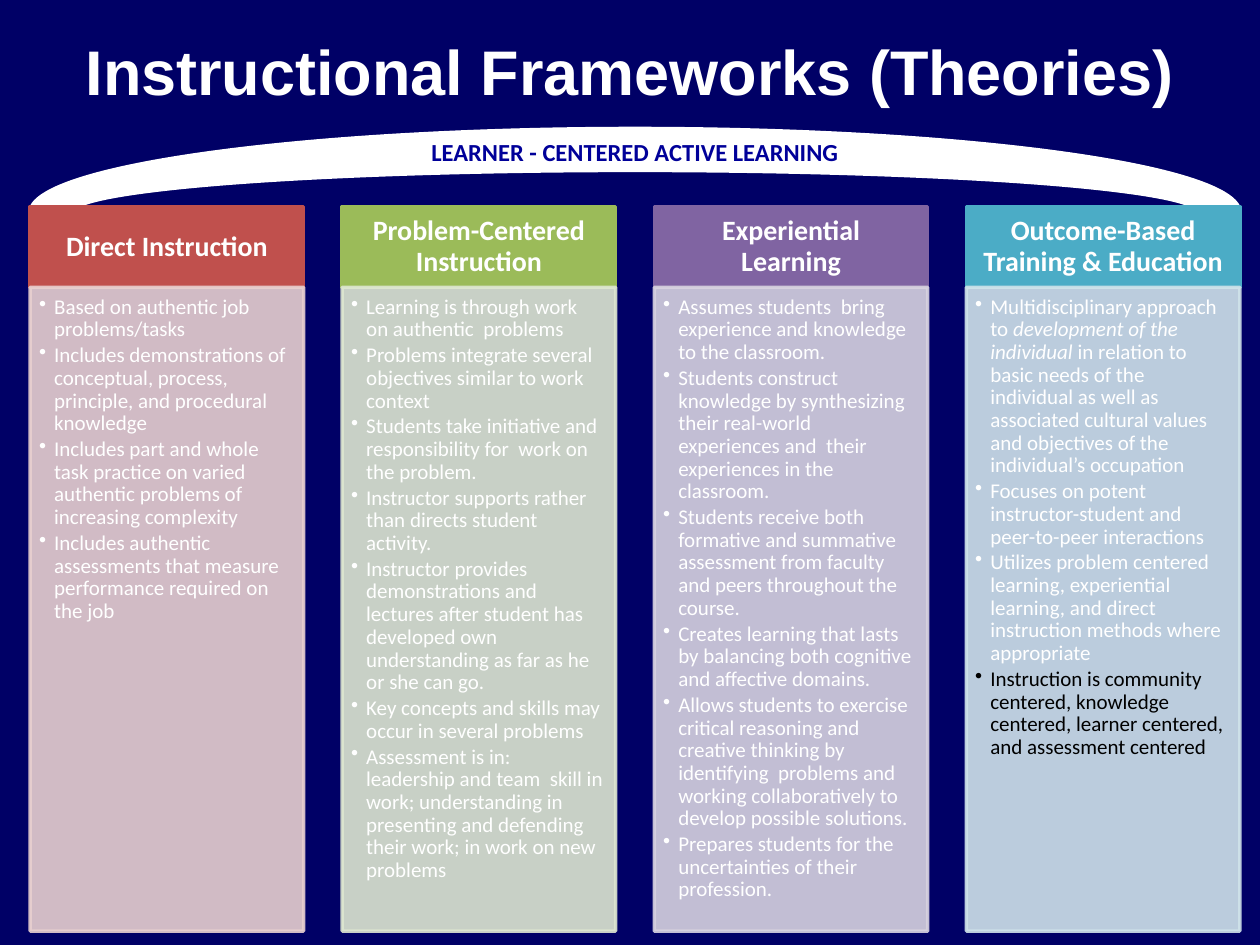
from dataclasses import dataclass

from lxml import etree
from pptx import Presentation
from pptx.dml.color import RGBColor
from pptx.enum.shapes import MSO_SHAPE
from pptx.enum.text import MSO_ANCHOR, PP_ALIGN
from pptx.oxml.ns import qn
from pptx.util import Inches, Pt

RECTANGLE, BLOCK_ARC = MSO_SHAPE.RECTANGLE, MSO_SHAPE.BLOCK_ARC
TOP, MIDDLE = MSO_ANCHOR.TOP, MSO_ANCHOR.MIDDLE
LEFT, CENTER = PP_ALIGN.LEFT, PP_ALIGN.CENTER


@dataclass(frozen=True)
class Theme:
    background: str = "000066"
    white: str = "FFFFFF"
    black: str = "000000"
    arc_text: str = "000099"
    title_font: str = "Arial"
    body_font: str = "Calibri"
    title_size: int = 36
    heading_size: int = 16
    arc_size: int = 14
    body_size: int = 12
    line_width: int = 2
    body_opacity: int = 90


class FrameworkSlide:
    def __init__(self, slide, theme):
        self.slide = slide
        self.theme = theme
        slide.background.fill.solid()
        slide.background.fill.fore_color.rgb = RGBColor.from_string(theme.background)

    def panel(self, preset, box, color, opacity=100):
        shape = self.slide.shapes.add_shape(preset, *map(Inches, box))
        shape.shadow.inherit = False
        shape.line.width = Pt(self.theme.line_width)
        shape.line.fill.solid()
        shape.fill.solid()
        for fill in (shape.fill, shape.line.fill):
            fill.fore_color.rgb = RGBColor.from_string(color)
        if opacity < 100:
            for tint in shape._element.spPr.iter(qn("a:srgbClr")):
                etree.SubElement(tint, qn("a:alpha"), val=str(opacity * 1000))
        return shape

    def frame(self, shape, insets, anchor=MIDDLE):
        frame = shape.text_frame
        frame.word_wrap = True
        frame.vertical_anchor = anchor
        (frame.margin_left, frame.margin_top,
         frame.margin_right, frame.margin_bottom) = map(Inches, insets)
        return frame

    def style(self, paragraph, size, color, font=None, bold=False, align=CENTER):
        paragraph.alignment = align
        paragraph.font.name = font or self.theme.body_font
        paragraph.font.size = Pt(size)
        paragraph.font.bold = bold
        paragraph.font.color.rgb = RGBColor.from_string(color)

    def title(self, text, box):
        shape = self.slide.shapes.add_textbox(*map(Inches, box))
        paragraph = self.frame(shape, (0.1, 0.05, 0.1, 0.05)).paragraphs[0]
        paragraph.text = text
        self.style(paragraph, self.theme.title_size, self.theme.white,
                   self.theme.title_font, bold=True)

    def arc(self, text, box):
        shape = self.panel(BLOCK_ARC, box, self.theme.white)
        for index, value in enumerate((108, 0, 0.25)):
            shape.adjustments[index] = value
        paragraph = self.frame(shape, (0.1, 0.05, 0.1, 0.35)).paragraphs[0]
        paragraph.text = text
        self.style(paragraph, self.theme.arc_size, self.theme.arc_text, bold=True)

    def heading(self, text, box, color):
        shape = self.panel(RECTANGLE, box, color)
        paragraph = self.frame(shape, (0.12, 0.07, 0.12, 0.07)).paragraphs[0]
        paragraph.text = text
        paragraph.line_spacing = 0.9
        self.style(paragraph, self.theme.heading_size, self.theme.white, bold=True)

    def bullets(self, points, box, color, dark_point=None):
        shape = self.panel(RECTANGLE, box, color, self.theme.body_opacity)
        frame = self.frame(shape, (0.07, 0.07, 0.09, 0.1), TOP)
        for index, point in enumerate(points):
            paragraph = frame.add_paragraph() if index else frame.paragraphs[0]
            for part, words in enumerate(point.split("*")):
                run = paragraph.add_run()
                run.text = words
                if part % 2:
                    run.font.italic = True
            paragraph.line_spacing = 0.9
            paragraph.space_after = Pt(1.8)
            properties = paragraph._p.get_or_add_pPr()
            properties.set("marL", str(Inches(0.12)))
            properties.set("indent", str(-Inches(0.12)))
            etree.SubElement(properties, qn("a:buChar"), char="•")
            text_color = self.theme.black if index == dark_point else self.theme.white
            self.style(paragraph, self.theme.body_size, text_color, align=LEFT)


FRAMEWORKS = [
    ("Direct Instruction", "C0504D", "E8D0D0", None, [
        "Based on authentic job problems/tasks",
        "Includes demonstrations of conceptual, process, principle, and procedural knowledge",
        "Includes part and whole task practice on varied authentic problems of "
        "increasing complexity",
        "Includes authentic assessments that measure performance required on the job",
    ]),
    ("Problem-Centered Instruction", "9BBB59", "DEE7D1", None, [
        "Learning is through work on authentic  problems",
        "Problems integrate several objectives similar to work context",
        "Students take initiative and responsibility for  work on the problem.",
        "Instructor supports rather than directs student  activity.",
        "Instructor provides demonstrations and lectures after student has developed own "
        "understanding as far as he or she can go.",
        "Key concepts and skills may occur in several problems",
        "Assessment is in: leadership and team  skill in work; understanding in presenting "
        "and defending  their work; in work on new problems",
    ]),
    ("Experiential Learning", "8064A2", "D8D3E0", None, [
        "Assumes students  bring experience and knowledge to the classroom.",
        "Students construct knowledge by synthesizing their real-world experiences and  "
        "their experiences in the classroom.",
        "Students receive both formative and summative assessment from faculty and peers "
        "throughout the course.",
        "Creates learning that lasts by balancing both cognitive and affective domains.",
        "Allows students to exercise critical reasoning and creative thinking by  "
        "identifying  problems and working collaboratively to develop possible solutions.",
        "Prepares students for the uncertainties of their profession.",
    ]),
    ("Outcome-Based Training & Education", "4BACC6", "D0E3EA", 3, [
        "Multidisciplinary approach to *development of the individual* in relation to basic "
        "needs of the individual as well as associated cultural values and objectives of "
        "the individual’s occupation",
        "Focuses on potent instructor-student and peer-to-peer interactions",
        "Utilizes problem centered learning, experiential learning, and direct instruction "
        "methods where appropriate",
        "Instruction is community centered, knowledge centered, learner centered, and "
        "assessment centered",
    ]),
]


def main():
    deck = Presentation()
    deck.slide_width, deck.slide_height = Inches(10), Inches(7.5)
    page = FrameworkSlide(deck.slides.add_slide(deck.slide_layouts[6]), Theme())

    margin, span, column_width = 0.24, 9.6, 2.17
    heading_top, heading_height = 1.64, 0.64
    body_top, body_height = heading_top + heading_height, 5.11
    pitch = (span - column_width) / (len(FRAMEWORKS) - 1)

    page.arc("LEARNER - CENTERED ACTIVE LEARNING", (margin, 1.02, span, 1.33))
    page.title("Instructional Frameworks (Theories)", (0.5, 0.08, 9, 0.95))
    for column, (name, strong, pale, dark_point, points) in enumerate(FRAMEWORKS):
        left = margin + column * pitch
        page.heading(name, (left, heading_top, column_width, heading_height), strong)
        page.bullets(points, (left, body_top, column_width, body_height), pale, dark_point)

    deck.save("out.pptx")


if __name__ == "__main__":
    main()
